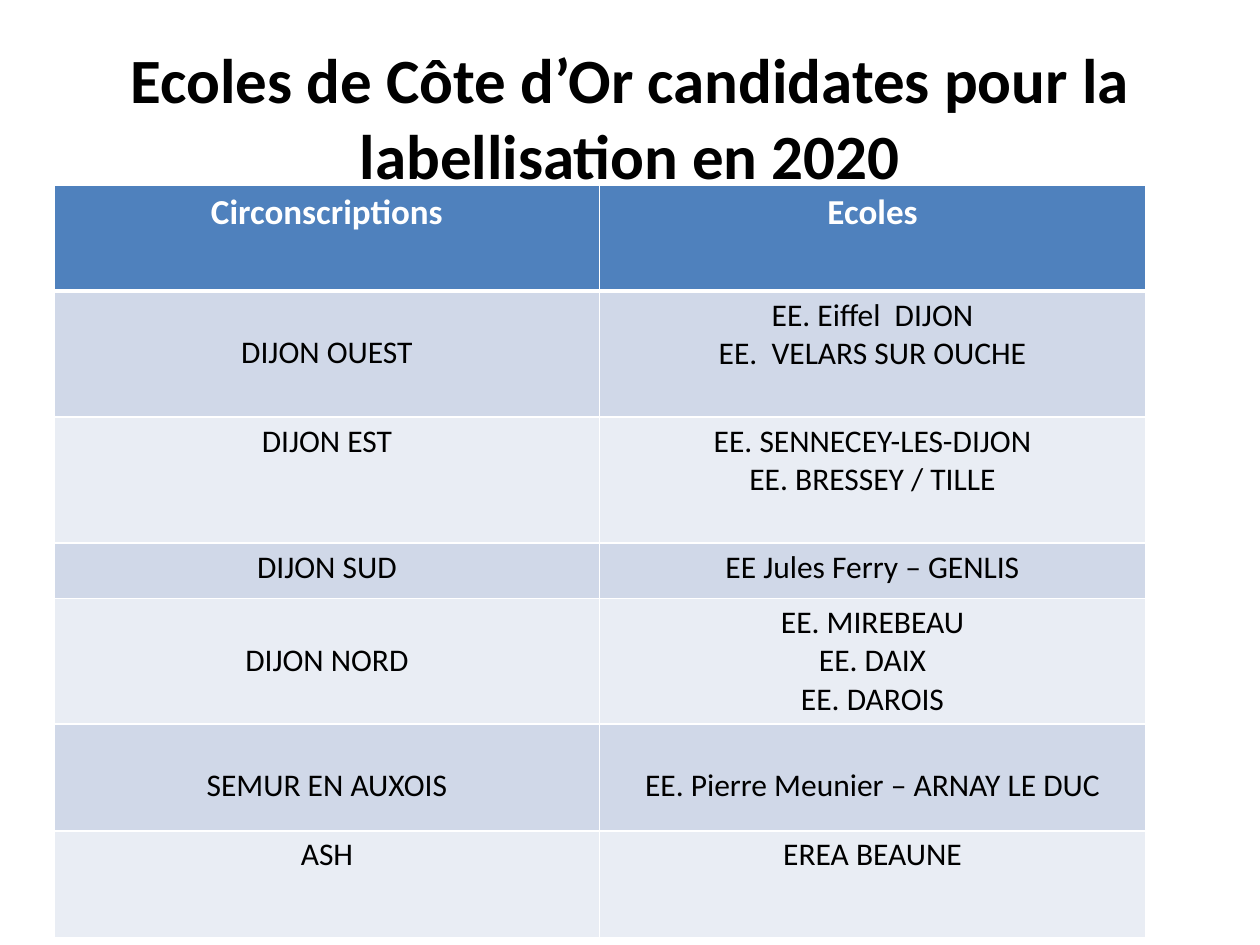
from lxml import etree
from pptx import Presentation
from pptx.dml.color import RGBColor
from pptx.enum.text import MSO_ANCHOR, MSO_AUTO_SIZE, PP_ALIGN
from pptx.oxml.ns import qn
from pptx.util import Inches, Pt

CENTER = PP_ALIGN.CENTER
TOP, MIDDLE = MSO_ANCHOR.TOP, MSO_ANCHOR.MIDDLE
NO_FIT = MSO_AUTO_SIZE.NONE

COLORS = {"text": "000000", "white": "FFFFFF", "header": "4F81BD",
          "odd": "D0D8E8", "even": "E9EDF4"}
FORMATS = {
    "title": {"size": Pt(36), "bold": True, "name": "Calibri"},
    "header": {"size": Pt(20), "bold": True, "name": "Calibri"},
    "body": {"size": Pt(18), "bold": False, "name": "Calibri"},
}
PADDING = 0.04
ONE_LINE = 0.3

HEADINGS = ("Circonscriptions", "Ecoles")
SCHOOLS = [
    (1.0, "DIJON OUEST", "EE. Eiffel  DIJON\nEE.  VELARS SUR OUCHE", (1, 0)),
    (1.0, "DIJON EST", "EE. SENNECEY-LES-DIJON\nEE. BRESSEY / TILLE", (0, 0)),
    (0.44, "DIJON SUD", "EE Jules Ferry – GENLIS", (0, 0)),
    (0.99, "DIJON NORD", "EE. MIREBEAU\nEE. DAIX\nEE. DAROIS", (1, 0)),
    (0.85, "SEMUR EN AUXOIS", "EE. Pierre Meunier – ARNAY LE DUC", (1, 1)),
    (0.85, "ASH", "EREA BEAUNE", (0, 0)),
]


class SlideBuilder:
    def __init__(self, deck):
        self.page = deck.slides.add_slide(deck.slide_layouts[5])

    def set_text(self, frame, text, style, color):
        frame.text = text
        for para in frame.paragraphs:
            para.alignment = CENTER
            for span in para.runs:
                for key, value in FORMATS[style].items():
                    setattr(span.font, key, value)
                span.font.color.rgb = RGBColor.from_string(COLORS[color])

    def title(self, text, left, top, width, height):
        box = self.page.shapes.title
        box.left, box.top = Inches(left), Inches(top)
        box.width, box.height = Inches(width), Inches(height)
        box.text_frame.auto_size = NO_FIT
        box.text_frame.vertical_anchor = MIDDLE
        self.set_text(box.text_frame, text, "title", "text")

    def borders(self, cell, top=1, bottom=1):
        properties = cell._tc.get_or_add_tcPr()
        for side, points in (("L", 1), ("R", 1), ("T", top), ("B", bottom)):
            line = etree.SubElement(properties, qn(f"a:ln{side}"), w=str(Pt(points)))
            fill = etree.SubElement(line, qn("a:solidFill"))
            etree.SubElement(fill, qn("a:srgbClr"), val=COLORS["white"])

    def paint(self, cell, color):
        cell.fill.solid()
        cell.fill.fore_color.rgb = RGBColor.from_string(COLORS[color])

    def header_cell(self, cell, text):
        self.borders(cell, bottom=3)
        self.paint(cell, "header")
        self.set_text(cell.text_frame, text, "header", "white")

    def body_cell(self, cell, text, row, skipped_lines):
        margins = {"margin_left": PADDING, "margin_right": PADDING,
                   "margin_top": PADDING + skipped_lines * ONE_LINE,
                   "margin_bottom": PADDING}
        for key, value in margins.items():
            setattr(cell, key, Inches(value))
        cell.vertical_anchor = TOP
        self.borders(cell, top=3 if row == 1 else 1)
        self.paint(cell, "odd" if row % 2 else "even")
        self.set_text(cell.text_frame, text, "body", "text")

    def school_table(self, left, top, width, header_height):
        heights = [header_height] + [school[0] for school in SCHOOLS]
        table = self.page.shapes.add_table(
            len(heights), len(HEADINGS), Inches(left), Inches(top),
            Inches(width), Inches(sum(heights))).table
        for row, height in zip(table.rows, heights):
            row.height = Inches(height)
        for column, heading in enumerate(HEADINGS):
            self.header_cell(table.cell(0, column), heading)
        for row, (_, district, names, skips) in enumerate(SCHOOLS, 1):
            for column, text in enumerate((district, names)):
                self.body_cell(table.cell(row, column), text, row, skips[column])


def main():
    deck = Presentation()
    deck.slide_width, deck.slide_height = Inches(10), Inches(7.5)
    builder = SlideBuilder(deck)
    builder.title("Ecoles de Côte d’Or candidates pour la labellisation en 2020",
                  0.5, 0.3, 9, 1.25)
    builder.school_table(0.43, 1.47, 8.66, 0.84)
    deck.save("out.pptx")


if __name__ == "__main__":
    main()
